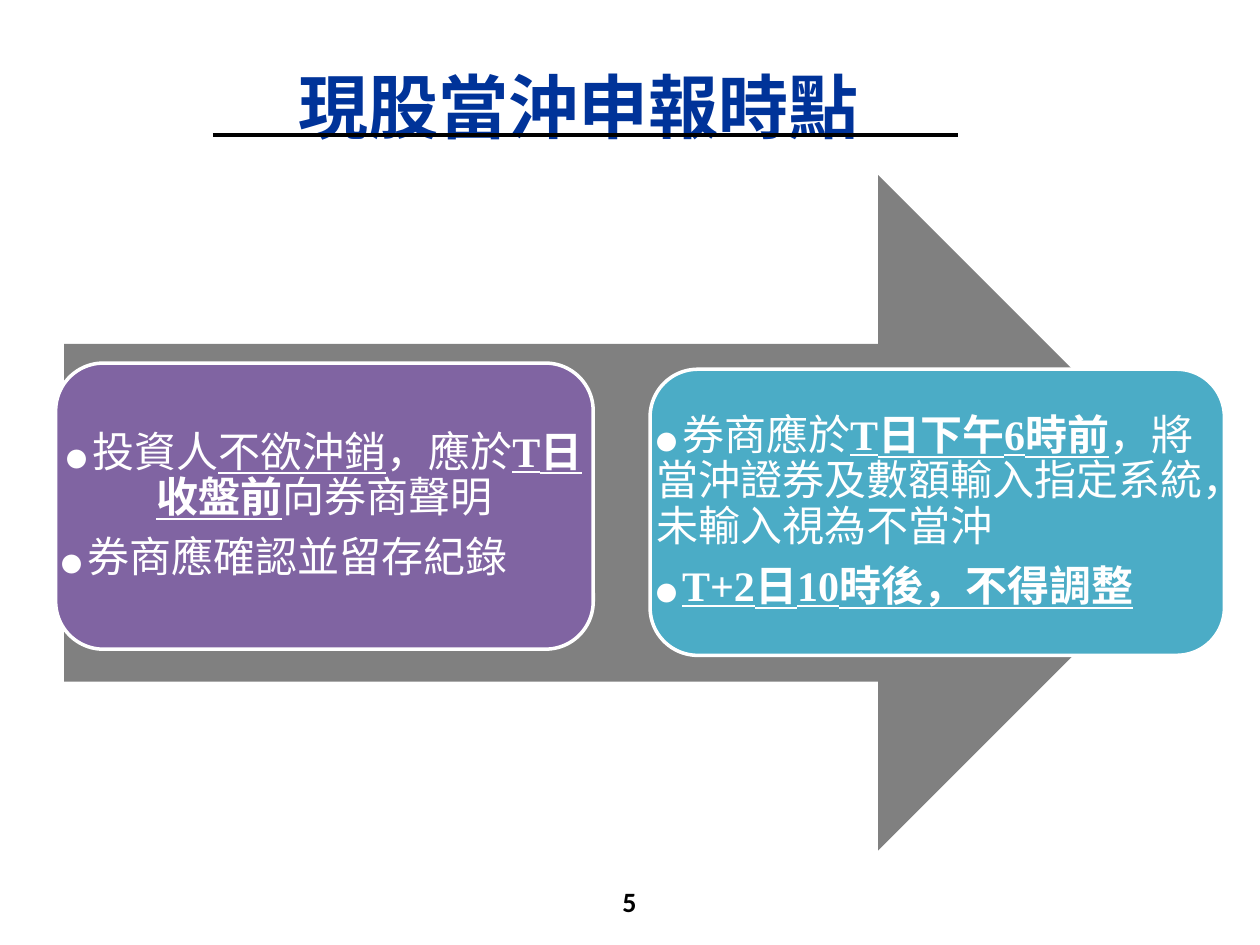
from dataclasses import dataclass

from lxml import etree
from pptx import Presentation
from pptx import util as u
from pptx.dml.color import RGBColor
from pptx.enum import shapes, text
from pptx.oxml import ns

Pt = u.Pt
ALIGN = text.PP_ALIGN


@dataclass(frozen=True)
class Theme:
    title: str = "003399"
    ink: str = "000000"
    white: str = "FFFFFF"
    arrow: str = "808080"
    investor: str = "8064A2"
    broker: str = "4BACC6"
    sans: str = "Noto Sans CJK SC"
    serif: str = "Times New Roman"
    number: str = "Calibri"
    title_size: int = 40
    body_size: int = 24
    number_size: int = 16
    bullet_size: int = 12


THEME = Theme()


def add_text(para, words, size=THEME.body_size, font=THEME.sans,
             color=THEME.white, bold=False, underline=False):
    span = para.add_run()
    span.text = words
    span.font.size = Pt(size)
    span.font.name = font
    span.font.bold = bold
    span.font.underline = underline
    span.font.color.rgb = RGBColor.from_string(color)
    # East Asian characters take the sans face
    east = etree.SubElement(span.font._element, ns.qn("a:ea"))
    east.set("typeface", THEME.sans)


def set_frame(frame, inset=3.6):
    frame.word_wrap = True
    frame.auto_size = text.MSO_AUTO_SIZE.NONE
    frame.vertical_anchor = text.MSO_ANCHOR.MIDDLE
    frame.margin_left = frame.margin_right = Pt(inset)
    frame.margin_top = frame.margin_bottom = Pt(inset)


def add_block(page, kind, box, fill, line=None):
    block = page.shapes.add_shape(kind, *map(Pt, box))
    block.shadow.inherit = False
    block.fill.solid()
    block.fill.fore_color.rgb = RGBColor.from_string(fill)
    if line:
        block.line.color.rgb = RGBColor.from_string(line)
        block.line.width = Pt(2)
    else:
        block.line.fill.background()


def add_title(page, box, words):
    title = page.shapes.title
    title.left, title.top, title.width, title.height = map(Pt, box)
    set_frame(title.text_frame)
    para = title.text_frame.paragraphs[0]
    para.alignment = ALIGN.CENTER
    add_text(para, words, size=THEME.title_size, color=THEME.title, bold=True)


def add_rule(page, box):
    left, top, width, _ = box
    rule = page.shapes.add_connector(
        shapes.MSO_CONNECTOR.STRAIGHT,
        Pt(left), Pt(top), Pt(left + width), Pt(top))
    rule.line.color.rgb = RGBColor.from_string(THEME.ink)
    rule.line.width = Pt(2.25)
    etree.SubElement(rule._element.spPr, ns.qn("a:effectLst"))


def add_panel(page, box, fill, items):
    """Rounded card; each item is an alignment and a list of (words, format)."""
    add_block(page, shapes.MSO_SHAPE.ROUNDED_RECTANGLE, box, fill, THEME.white)
    frame = page.shapes.add_textbox(*map(Pt, box)).text_frame
    set_frame(frame)
    for index, (align, spans) in enumerate(items):
        para = frame.add_paragraph() if index else frame.paragraphs[0]
        para.alignment = align
        para.line_spacing = 0.9
        para.space_after = Pt(8.4)
        add_text(para, "● ", size=THEME.bullet_size)
        for words, look in spans:
            add_text(para, words, **look)


def add_page_number(page, box, words):
    frame = page.shapes.add_textbox(*map(Pt, box)).text_frame
    set_frame(frame)
    para = frame.paragraphs[0]
    para.alignment = ALIGN.CENTER
    add_text(para, words, size=THEME.number_size, font=THEME.number,
             color=THEME.ink, bold=True)


def main():
    deck = Presentation()
    deck.slide_width, deck.slide_height = Pt(720), Pt(540)
    page = deck.slides.add_slide(deck.slide_layouts[5])

    plain = {"font": THEME.serif}
    strong = {"font": THEME.serif, "bold": True, "underline": True}

    # Heading and page number
    add_title(page, (76.3, 15.1, 508.3, 90), "現股當沖申報時點")
    add_page_number(page, (275.8, 500.4, 167.8, 28.8), "5")

    # Process arrow behind the two cards
    add_block(page, shapes.MSO_SHAPE.RIGHT_ARROW, (36.7, 100, 658.1, 386),
              THEME.arrow)

    # Investor card
    add_panel(page, (31.8, 207.5, 307.2, 163.5), THEME.investor, [
        (ALIGN.CENTER, [("投資人", {}), ("不欲沖銷", {"underline": True}),
                        ("，應於", {}), ("T日", strong),
                        ("收盤前", {"bold": True, "underline": True}),
                        ("向券商聲明", {})]),
        (ALIGN.LEFT, [("券商應確認並留存紀錄", {})]),
    ])

    # Broker card
    add_panel(page, (371.5, 211, 328.2, 163.5), THEME.broker, [
        (ALIGN.LEFT, [("券商應於", plain), ("T日下午6時前", strong),
                      ("，將當沖證券及數額輸入指定系統，未輸入視為不當沖", plain)]),
        (ALIGN.LEFT, [("T+2日10時後，不得調整", strong)]),
    ])

    # Line under the heading
    add_rule(page, (121.7, 77, 425.5, 0))
    deck.save("out.pptx")


if __name__ == "__main__":
    main()
